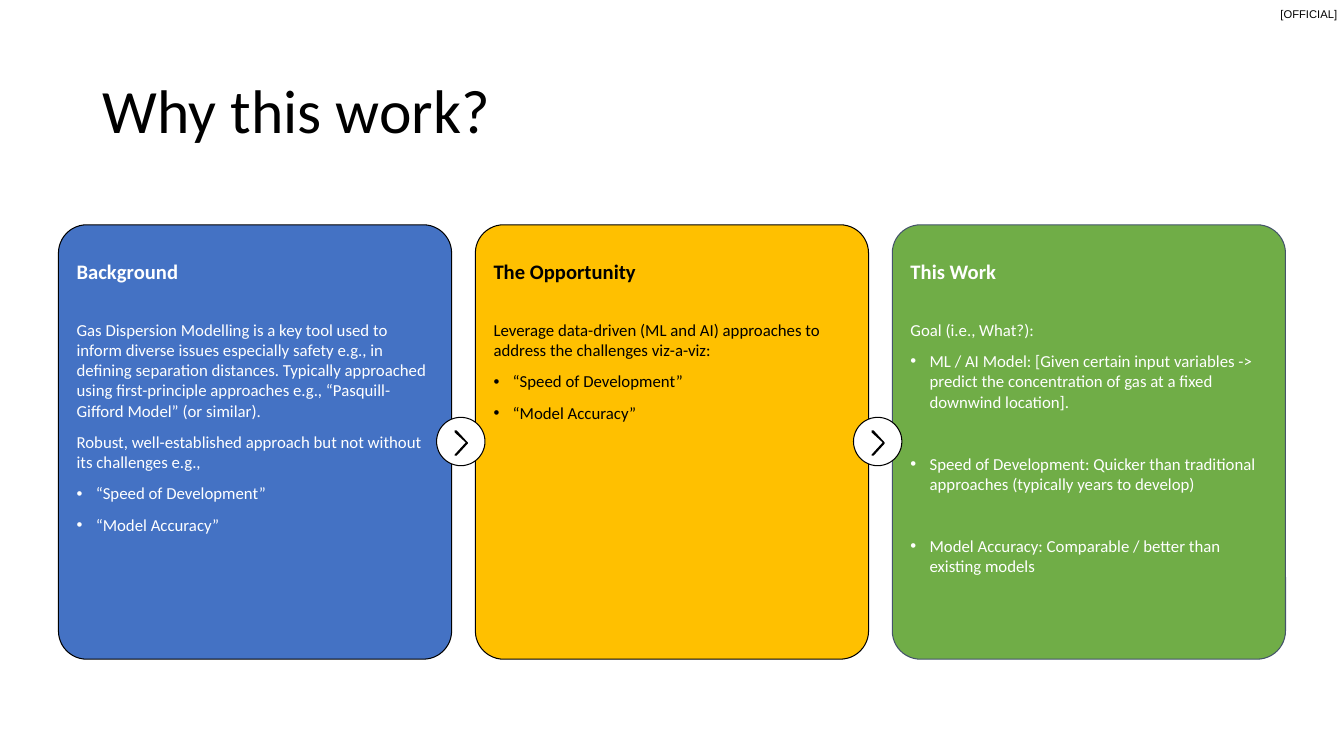
"""Build the 'Why this work?' slide with three linked cards."""
from lxml.etree import SubElement
from pptx import Presentation
from pptx.dml.color import RGBColor
from pptx.enum.shapes import MSO_SHAPE
from pptx.enum.text import MSO_ANCHOR, MSO_AUTO_SIZE, PP_ALIGN
from pptx.oxml.ns import qn
from pptx.util import Inches, Pt

TITLE = "Why this work?"
MARKING = "[OFFICIAL]"
CHALLENGES = [("“Speed of Development”", True, 8), ("“Model Accuracy”", True, 8)]
CARDS = [
    {
        "heading": "Background",
        "colours": ("blue", "white", "black"),
        "body": [
            ("Gas Dispersion Modelling is a key tool used to inform diverse issues "
             "especially safety e.g., in defining separation distances. Typically "
             "approached using first-principle approaches e.g., “Pasquill-Gifford "
             "Model” (or similar).", False, 25.5),
            ("Robust, well-established approach but not without its challenges e.g.,",
             False, 8),
            *CHALLENGES,
        ],
    },
    {
        "heading": "The Opportunity",
        "colours": ("amber", "black", "black"),
        "body": [
            ("Leverage data-driven (ML and AI) approaches to address the challenges "
             "viz-a-viz:", False, 25.5),
            *CHALLENGES,
        ],
    },
    {
        "heading": "This Work",
        "colours": ("green", "white", "slate"),
        "body": [
            ("Goal (i.e., What?):", False, 25.5),
            ("ML / AI Model: [Given certain input variables -> predict the "
             "concentration of gas at a fixed downwind location].", True, 8),
            ("Speed of Development: Quicker than traditional approaches (typically "
             "years to develop)", True, 30),
            ("Model Accuracy: Comparable / better than existing models", True, 30),
        ],
    },
]
THEME = {
    "colours": {"black": "000000", "white": "FFFFFF", "blue": "4472C4",
                "amber": "FFC000", "green": "70AD47", "slate": "44546A"},
    "sizes": {"title": 44, "heading": 14.7, "body": 12, "marking": 8},
    "line": 0.75,
}
SLIDE_SIZE = (13.33, 7.5)
CARD_LEFT, CARD_TOP, CARD_WIDTH, CARD_HEIGHT = 0.58, 2.23, 3.9, 4.31
CARD_PITCH = 4.135
CIRCLE_OFFSET, CIRCLE_TOP, CIRCLE_SIZE = 3.75, 4.14, 0.48
CHEVRON_OFFSET = (0.18, 0.13)
CHEVRON = [(1.5, 0.5), (13, 12), (13, 13), (1.5, 25), (0.5, 25), (0, 24.5),
           (0, 23.5), (11, 12.5), (0, 1.5), (0, 0.5), (0.5, 0)]
INDENT = 0.19


def colour(name):
    return RGBColor.from_string(THEME["colours"][name])


def box(left, top, width, height):
    return [Inches(value) for value in (left, top, width, height)]


def apply(target, values):
    for name, value in values.items():
        setattr(target, name, value)


def write(paragraph, text, size, colour_name, font="Calibri", bold=False):
    run = paragraph.add_run()
    run.text = text
    apply(run.font, {"name": font, "size": Pt(THEME["sizes"][size]), "bold": bold})
    run.font.color.rgb = colour(colour_name)


def paint(shape, fill, line=None):
    shape.shadow.inherit = False
    shape.fill.solid()
    shape.fill.fore_color.rgb = colour(fill)
    if line:
        shape.line.color.rgb = colour(line)
        shape.line.width = Pt(THEME["line"])
    else:
        shape.line.fill.background()


def add_bullet(paragraph):
    properties = paragraph._p.get_or_add_pPr()
    properties.set("marL", str(Inches(INDENT)))
    properties.set("indent", str(-Inches(INDENT)))
    SubElement(properties, qn("a:buFont")).set("typeface", "Arial")
    SubElement(properties, qn("a:buChar")).set("char", "•")


def add_title(slide):
    title = slide.shapes.title
    apply(title, dict(zip(("left", "top", "width", "height"),
                          box(0.92, 0.4, 11.5, 1.45))))
    apply(title.text_frame, {"vertical_anchor": MSO_ANCHOR.MIDDLE, "word_wrap": True,
                             "auto_size": MSO_AUTO_SIZE.NONE})
    paragraph = title.text_frame.paragraphs[0]
    apply(paragraph, {"alignment": PP_ALIGN.LEFT, "line_spacing": 0.9})
    write(paragraph, TITLE, "title", "black")


def add_marking(slide):
    marking = slide.shapes.add_textbox(*box(12.7, 0.07, 0.6, 0.13))
    apply(marking.text_frame, {"margin_left": 0, "margin_top": 0, "margin_right": 0,
                               "margin_bottom": 0, "word_wrap": False,
                               "auto_size": MSO_AUTO_SIZE.SHAPE_TO_FIT_TEXT})
    write(marking.text_frame.paragraphs[0], MARKING, "marking", "black", "Arial")


def add_card(slide, card, left):
    fill, ink, line = card["colours"]
    shape = slide.shapes.add_shape(MSO_SHAPE.ROUNDED_RECTANGLE,
                                   *box(left, CARD_TOP, CARD_WIDTH, CARD_HEIGHT))
    shape.adjustments[0] = 0.072
    paint(shape, fill, line)
    frame = shape.text_frame
    apply(frame, {"margin_left": Inches(0.1), "margin_top": Inches(0.26),
                  "margin_right": Inches(0.1), "margin_bottom": Inches(0.05),
                  "vertical_anchor": MSO_ANCHOR.TOP, "word_wrap": True})
    heading = frame.paragraphs[0]
    heading.alignment = PP_ALIGN.LEFT
    write(heading, card["heading"], "heading", ink, bold=True)
    for text, bulleted, space in card["body"]:
        paragraph = frame.add_paragraph()
        if bulleted:
            add_bullet(paragraph)
        apply(paragraph, {"alignment": PP_ALIGN.LEFT, "space_before": Pt(space)})
        write(paragraph, text, "body", ink)


def add_link(slide, left):
    group = slide.shapes.add_group_shape()
    circle = group.shapes.add_shape(MSO_SHAPE.OVAL,
                                    *box(left, CIRCLE_TOP, CIRCLE_SIZE, CIRCLE_SIZE))
    paint(circle, "white", "black")
    builder = group.shapes.build_freeform(*CHEVRON[0], scale=Inches(0.01))
    builder.add_line_segments(CHEVRON[1:], close=True)
    chevron = builder.convert_to_shape(Inches(left + CHEVRON_OFFSET[0]),
                                       Inches(CIRCLE_TOP + CHEVRON_OFFSET[1]))
    paint(chevron, "black")


def main():
    presentation = Presentation()
    apply(presentation, dict(zip(("slide_width", "slide_height"),
                                 map(Inches, SLIDE_SIZE))))
    slide = presentation.slides.add_slide(presentation.slide_layouts[5])
    add_marking(slide)
    add_title(slide)
    lefts = [CARD_LEFT + index * CARD_PITCH for index in range(len(CARDS))]
    for card, left in zip(CARDS, lefts):
        add_card(slide, card, left)
    for left in lefts[:-1]:
        add_link(slide, left + CIRCLE_OFFSET)
    presentation.save("out.pptx")


if __name__ == "__main__":
    main()
